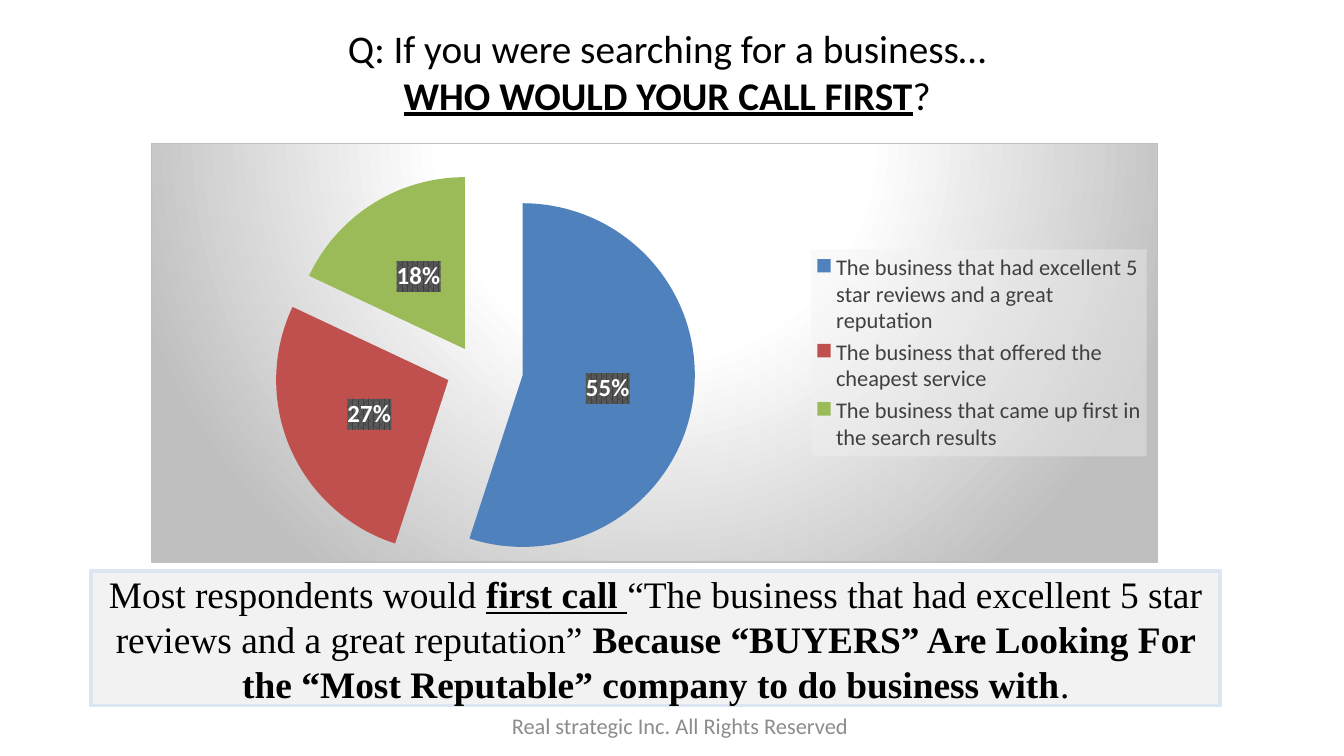
import pptx
import pptx.chart.data
import pptx.dml.color
import pptx.enum.chart
import pptx.enum.shapes
import pptx.enum.text
import pptx.oxml
import pptx.oxml.ns
import pptx.util

THEME = {
    "sans": "Calibri", "serif": "Times New Roman",
    "title": 21, "body": 20, "label": 13.3, "small": 12, "chart": 10,
    "ink": "000000", "legend": "404040", "footer": "8C8C8C", "white": "FFFFFF",
    "panel": "F2F2F2", "panel_edge": "DCE6F2", "chart_edge": "BFBFBF",
    "hatch": "595959", "slices": ["4F81BD", "C0504D", "9BBB59"],
}
NAMESPACES = pptx.oxml.ns.nsdecls("c", "a")

deck = pptx.Presentation()
deck.slide_width = pptx.util.Inches(10)
deck.slide_height = deck.slide_width * 9 // 16
page = deck.slides.add_slide(deck.slide_layouts[5])


def area(left, top, width, height):
    """Turn percentages of the slide into a left, top, width, height tuple."""
    column, row = deck.slide_width / 100, deck.slide_height / 100
    return int(left * column), int(top * row), int(width * column), int(height * row)


def style(font, face, size, color, bold=False, underline=False):
    font.name = THEME[face]
    font.size = pptx.util.Pt(THEME[size])
    font.color.rgb = pptx.dml.color.RGBColor.from_string(THEME[color])
    font.bold = bold
    font.underline = underline


# Text boxes: title, conclusion panel and footer
title = page.shapes.title
title.left, title.top, title.width, title.height = area(13.1, 1.07, 73.1, 16.71)

panel = page.shapes.add_shape(
    pptx.enum.shapes.MSO_SHAPE.RECTANGLE, *area(6.8, 75.56, 84, 17.78))
panel.shadow.inherit = False
panel.fill.solid()
panel.fill.fore_color.rgb = pptx.dml.color.RGBColor.from_string(THEME["panel"])
panel.line.color.rgb = pptx.dml.color.RGBColor.from_string(THEME["panel_edge"])
panel.line.width = pptx.util.Pt(2)
panel.text_frame.margin_left = panel.text_frame.margin_right = pptx.util.Inches(0.07)
panel.text_frame.margin_top = panel.text_frame.margin_bottom = pptx.util.Inches(0.04)

footer = page.shapes.add_textbox(*area(35, 93.33, 31.2, 5.33))

# Each span is text, bold, underline; None is a line break
texts = [
    (title, "sans", "title", "ink", [
        ("Q: If you were searching for a business…", False, False),
        None,
        ("WHO WOULD YOUR CALL FIRST", True, True),
        ("?", False, False)]),
    (panel, "serif", "body", "ink", [
        ("Most respondents would ", False, False),
        ("first call ", True, True),
        ("“The business that had excellent 5 star reviews and a great reputation” ",
         False, False),
        ("Because “BUYERS” Are Looking For the “Most Reputable” company to do "
         "business with", True, False),
        (".", False, False)]),
    (footer, "sans", "small", "footer", [
        ("Real strategic Inc. All Rights Reserved", False, False)]),
]
for box, face, size, color, spans in texts:
    frame = box.text_frame
    frame.word_wrap = True
    frame.auto_size = pptx.enum.text.MSO_AUTO_SIZE.NONE
    frame.vertical_anchor = pptx.enum.text.MSO_ANCHOR.MIDDLE
    para = frame.paragraphs[0]
    para.alignment = pptx.enum.text.PP_ALIGN.CENTER
    for content in spans:
        if content is None:
            para.add_line_break()
            continue
        span = para.add_run()
        span.text, bold, underline = content
        style(span.font, face, size, color, bold, underline)

# Pie chart of the answers
answers = pptx.chart.data.CategoryChartData()
answers.categories = [
    "The business that had excellent 5 star reviews and a great reputation",
    "The business that offered the cheapest service",
    "The business that came up first in the search results",
]
answers.add_series("Series 1", [55, 27, 18])
chart = page.shapes.add_chart(
    pptx.enum.chart.XL_CHART_TYPE.PIE, *area(11.2, 18.9, 75, 55.56), answers).chart
style(chart.font, "sans", "chart", "ink")
chart.has_title = False
chart.has_legend = True
legend = chart.legend
legend.position = pptx.enum.chart.XL_LEGEND_POSITION.RIGHT
legend.include_in_layout = False
style(legend.font, "sans", "small", "legend")

plot = chart.plots[0]
plot.vary_by_categories = True
series = plot.series[0]
labels = series.data_labels
labels.show_percentage = True
labels.show_value = False
labels.number_format = "0%"
labels.number_format_is_linked = False
labels.position = pptx.enum.chart.XL_LABEL_POSITION.CENTER
style(labels.font, "sans", "label", "white", bold=True)

# Slices pulled outwards, in percent of the radius
explosion = f'<c:explosion {NAMESPACES} val="%d"/>'
for index, color in enumerate(THEME["slices"]):
    fill = series.points[index].format.fill
    fill.solid()
    fill.fore_color.rgb = pptx.dml.color.RGBColor.from_string(color)
slices = series._element.findall(pptx.oxml.ns.qn("c:dPt"))
slices[0].addprevious(pptx.oxml.parse_xml(explosion % 2))
for piece, offset in zip(slices, [27, 18, 13]):
    piece.find(pptx.oxml.ns.qn("c:spPr")).addprevious(
        pptx.oxml.parse_xml(explosion % offset))

# Backgrounds of the chart, its labels and its legend
chart_fill = f"""<c:spPr {NAMESPACES}><a:gradFill><a:gsLst>
  <a:gs pos="0"><a:srgbClr val="{THEME['white']}"/></a:gs>
  <a:gs pos="39000"><a:srgbClr val="{THEME['white']}"/></a:gs>
  <a:gs pos="100000"><a:srgbClr val="{THEME['chart_edge']}"/></a:gs></a:gsLst>
  <a:path path="circle"><a:fillToRect l="50000" t="-80000" r="50000" b="180000"/></a:path>
  </a:gradFill><a:ln w="9525"><a:solidFill><a:srgbClr val="{THEME['chart_edge']}"/>
  </a:solidFill></a:ln></c:spPr>"""
label_fill = f"""<c:spPr {NAMESPACES}><a:pattFill prst="pct75">
  <a:fgClr><a:srgbClr val="{THEME['legend']}"/></a:fgClr>
  <a:bgClr><a:srgbClr val="{THEME['hatch']}"/></a:bgClr></a:pattFill></c:spPr>"""
legend_fill = f"""<c:spPr {NAMESPACES}><a:solidFill><a:srgbClr val="{THEME['panel']}">
  <a:alpha val="39000"/></a:srgbClr></a:solidFill></c:spPr>"""
space = chart._chartSpace
for parent, before, fill in [
        (space, "c:chart", chart_fill),
        (labels._element, "c:numFmt", label_fill),
        (legend._element, "c:overlay", legend_fill)]:
    parent.find(pptx.oxml.ns.qn(before)).addnext(pptx.oxml.parse_xml(fill))

# Places of the plot and the legend, in percent of the chart
plot_area = space.find(".//" + pptx.oxml.ns.qn("c:plotArea"))
for parent, slot, target, shares in [
        (plot_area, 0, '<c:layoutTarget val="inner"/>', (14.9, 11.7, 34.9, 83.8)),
        (legend._element, 1, "", (65.6, 25.3, 33.3, 49.4))]:
    for old in parent.findall(pptx.oxml.ns.qn("c:layout")):
        parent.remove(old)
    sizes = "".join(
        f'<c:{key} val="{share / 100:.3f}"/>' for key, share in zip("xywh", shares))
    parent.insert(slot, pptx.oxml.parse_xml(
        f'<c:layout {NAMESPACES}><c:manualLayout>{target}<c:xMode val="edge"/>'
        f'<c:yMode val="edge"/>{sizes}</c:manualLayout></c:layout>'))

deck.save("out.pptx")
